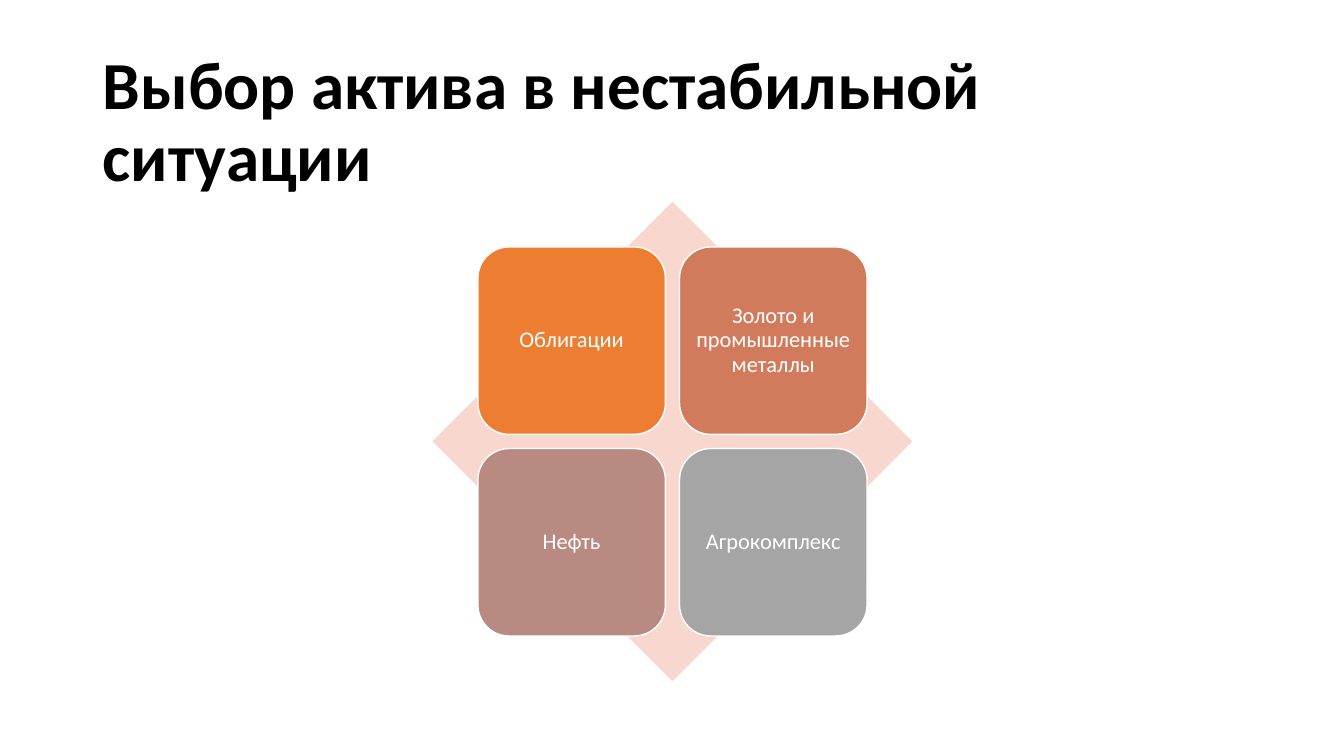
from pptx import Presentation
from pptx.dml.color import RGBColor
from pptx.enum.shapes import MSO_SHAPE as Preset
from pptx.enum.text import MSO_ANCHOR as Anchor, PP_ALIGN as Align
from pptx.util import Inches, Pt

BLACK = RGBColor(0x00, 0x00, 0x00)
WHITE = RGBColor(0xFF, 0xFF, 0xFF)
PALE_PINK = RGBColor(0xF8, 0xD7, 0xCE)
ORANGE = RGBColor(0xED, 0x7D, 0x31)
TERRACOTTA = RGBColor(0xD1, 0x7B, 0x5C)
DUSTY_ROSE = RGBColor(0xB9, 0x8A, 0x82)
GRAY = RGBColor(0xA5, 0xA5, 0xA5)

ASSETS = [
    ("Облигации", ORANGE),
    ("Золото и промышленные металлы", TERRACOTTA),
    ("Нефть", DUSTY_ROSE),
    ("Агрокомплекс", GRAY),
]
GRID_LEFT, GRID_TOP = 4.74, 2.45
TILE_SIZE, TILE_STEP = 1.86, 2.0
MARGINS = ("margin_left", "margin_right", "margin_top", "margin_bottom")


def write_text(shape, text, align, **font_format):
    frame = shape.text_frame
    frame.word_wrap = True
    frame.vertical_anchor = Anchor.MIDDLE
    para = frame.paragraphs[0]
    para.alignment = align
    para.line_spacing = 0.9
    span = para.add_run()
    span.text = text
    color = font_format.pop("color")
    for name, value in font_format.items():
        setattr(span.font, name, value)
    span.font.color.rgb = color


def add_filled_shape(preset, left, top, size, color):
    shape = page.shapes.add_shape(
        preset, Inches(left), Inches(top), Inches(size), Inches(size))
    shape.shadow.inherit = False
    shape.fill.solid()
    shape.fill.fore_color.rgb = color
    return shape


deck = Presentation()
deck.slide_width = Inches(13.33)
deck.slide_height = Inches(7.5)
page = deck.slides.add_slide(deck.slide_layouts[6])

title = page.shapes.add_textbox(
    Inches(0.92), Inches(0.61), Inches(11.5), Inches(1.24))
write_text(title, "Выбор актива в нестабильной ситуации", Align.LEFT,
           name="Calibri", size=Pt(48), bold=True, color=BLACK)

diamond = add_filled_shape(Preset.DIAMOND, 4.29, 2, 4.76, PALE_PINK)
diamond.line.fill.background()

for index, (asset, color) in enumerate(ASSETS):
    row, column = divmod(index, 2)
    tile = add_filled_shape(
        Preset.ROUNDED_RECTANGLE, GRID_LEFT + column * TILE_STEP,
        GRID_TOP + row * TILE_STEP, TILE_SIZE, color)
    tile.line.color.rgb = WHITE
    tile.line.width = Pt(1)
    for margin in MARGINS:
        setattr(tile.text_frame, margin, Inches(0.06))
    write_text(tile, asset, Align.CENTER,
               name="Calibri", size=Pt(16), color=WHITE)

deck.save("out.pptx")
